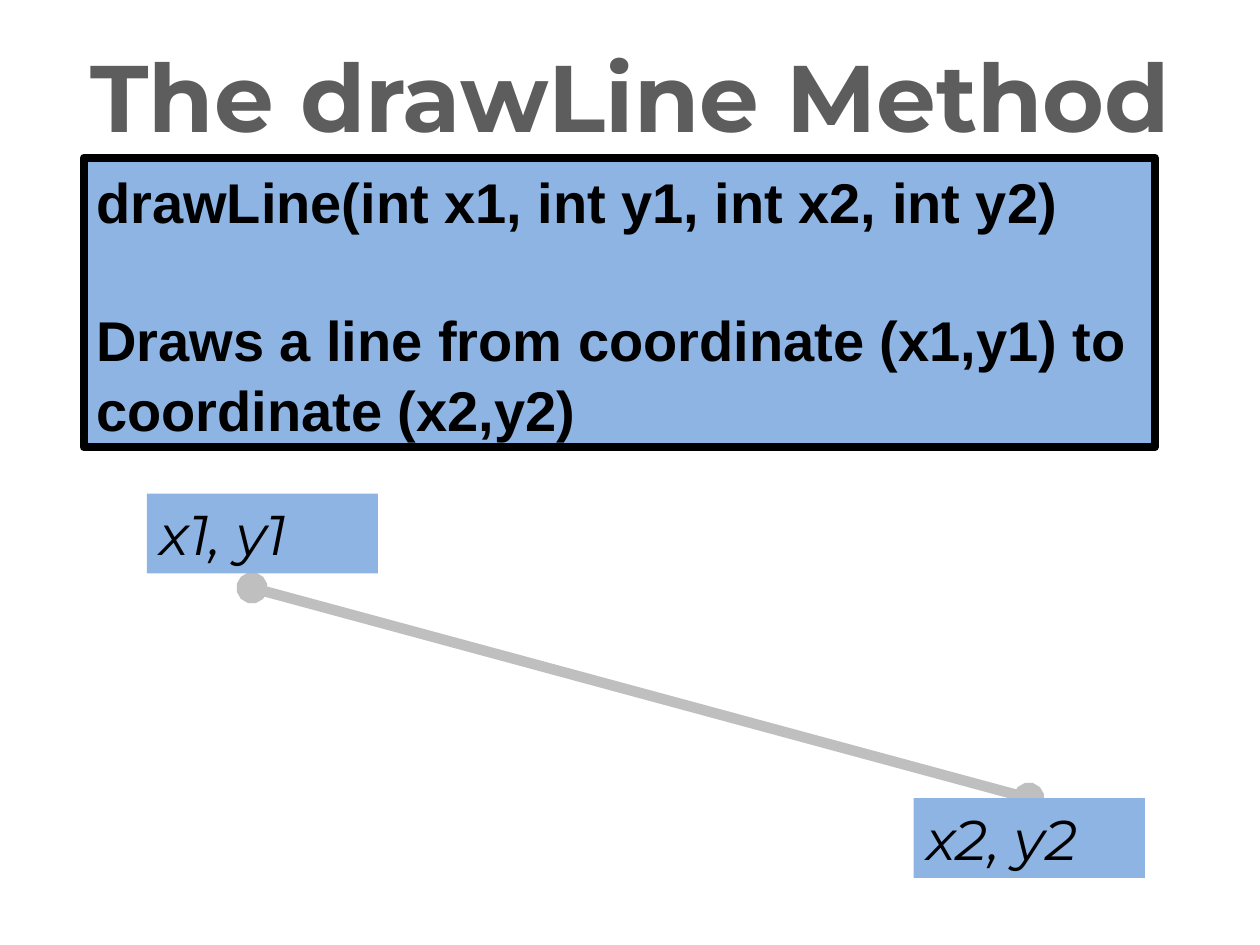
"""Build a slide that explains the drawLine method."""
from lxml import etree
from pptx import Presentation
from pptx.dml.color import RGBColor
from pptx.enum.shapes import MSO_CONNECTOR, MSO_SHAPE
from pptx.enum.text import MSO_ANCHOR, MSO_AUTO_SIZE, PP_ALIGN
from pptx.oxml.ns import qn
from pptx.util import Cm, Pt

RECTANGLE = MSO_SHAPE.RECTANGLE
STRAIGHT = MSO_CONNECTOR.STRAIGHT
TOP = MSO_ANCHOR.TOP
NO_AUTOFIT = MSO_AUTO_SIZE.NONE
LEFT, CENTER = PP_ALIGN.LEFT, PP_ALIGN.CENTER

BLACK = RGBColor(0x00, 0x00, 0x00)
BLUE = RGBColor(0x8E, 0xB4, 0xE3)
LIGHT_GRAY = RGBColor(0xBF, 0xBF, 0xBF)
DARK_GRAY = RGBColor(0x5D, 0x5D, 0x5D)

TITLE_ONLY = 5
LABEL_WIDTH, LABEL_HEIGHT = 4.66, 1.61


def write_text(shape, *texts, font="Montserrat", size=32, color=BLACK, bold=False,
               italic=False, align=LEFT, wrap=True, spacing=1.0, gap=0):
    """Fill a shape with one formatted paragraph per text."""
    frame = shape.text_frame
    frame.auto_size = NO_AUTOFIT
    frame.word_wrap = wrap
    frame.vertical_anchor = TOP
    for index, text in enumerate(texts):
        para = frame.add_paragraph() if index else frame.paragraphs[0]
        para.alignment = align
        para.line_spacing = spacing
        para.space_before = Pt(gap if index else 0)
        span = para.add_run()
        span.text = text
        span.font.name = font
        span.font.size = Pt(size)
        span.font.bold = bold
        span.font.italic = italic
        span.font.color.rgb = color


def add_title(page, text):
    """Place and format the title placeholder."""
    title = page.shapes.title
    title.left, title.top = Cm(1.02), Cm(0.64)
    title.width, title.height = Cm(23.37), Cm(2.57)
    write_text(title, text, size=54, color=DARK_GRAY, bold=True, align=CENTER, wrap=False)


def add_box(page, left, top, width, height, border=None):
    """Add a blue rectangle, outlined in black when a border width is given."""
    box = page.shapes.add_shape(RECTANGLE, Cm(left), Cm(top), Cm(width), Cm(height))
    box.shadow.inherit = False
    box.fill.solid()
    box.fill.fore_color.rgb = BLUE
    if border:
        box.line.color.rgb = BLACK
        box.line.width = Pt(border)
    else:
        box.line.fill.background()
    return box


def add_label(page, text, left, top):
    """Add a coordinate label."""
    write_text(add_box(page, left, top, LABEL_WIDTH, LABEL_HEIGHT), text, italic=True)


def add_dotted_end_line(page, start, end):
    """Add a thick gray line with a dot at both ends."""
    line = page.shapes.add_connector(STRAIGHT, *map(Cm, start + end))
    line.line.color.rgb = LIGHT_GRAY
    line.line.width = Pt(6)
    outline = line.line._get_or_add_ln()
    for tag in ("a:headEnd", "a:tailEnd"):
        etree.SubElement(outline, qn(tag), type="oval")
    etree.SubElement(line._element.spPr, qn("a:effectLst"))


def main():
    """Build and save the deck."""
    deck = Presentation()
    deck.slide_width, deck.slide_height = Cm(25.4), Cm(19.05)
    page = deck.slides.add_slide(deck.slide_layouts[TITLE_ONLY])
    add_title(page, "The drawLine Method")
    description = add_box(page, 1.69, 3.18, 21.59, 5.84, border=4.5)
    write_text(description, "drawLine(int x1, int y1, int x2, int y2)",
               "Draws a line from coordinate (x1,y1) to coordinate (x2,y2)",
               font="Arial", bold=True, spacing=1.05, gap=38.5)
    add_dotted_end_line(page, (5.08, 11.85), (20.74, 16.09))
    add_label(page, "x1, y1", 2.96, 9.95)
    add_label(page, "x2, y2", 18.42, 16.09)
    deck.save("out.pptx")


if __name__ == "__main__":
    main()
